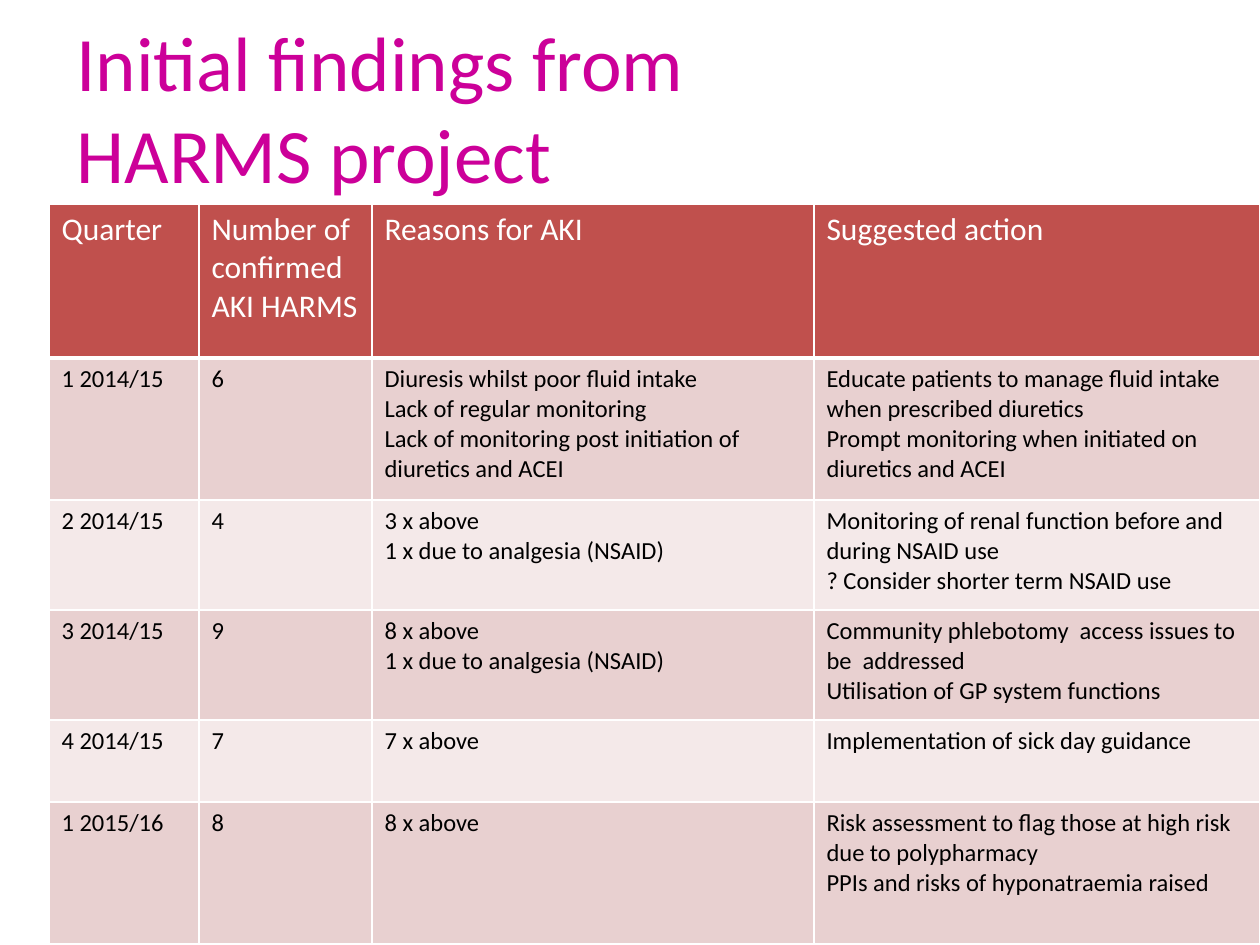
from lxml import etree
from pptx import Presentation
from pptx.dml.color import RGBColor
from pptx.enum.text import MSO_ANCHOR, MSO_AUTO_SIZE, PP_ALIGN
from pptx.oxml.ns import qn
from pptx.util import Pt

LEFT = PP_ALIGN.LEFT
MIDDLE = MSO_ANCHOR.MIDDLE
NO_AUTOFIT = MSO_AUTO_SIZE.NONE
PX = 914400 / 126
COLORS = {
    "title": "CC0099",
    "header": "C0504D",
    "odd_row": "E8D0D0",
    "even_row": "F4E9E9",
    "white": "FFFFFF",
    "black": "000000",
}
COLUMN_WIDTHS = [150, 173, 442, 446]
ROW_HEIGHTS = [154, 142, 110, 110, 82, 142]
FINDINGS = [
    ["Quarter", "Number of confirmed AKI HARMS", "Reasons for AKI", "Suggested action"],
    ["1 2014/15", "6",
     "Diuresis whilst poor fluid intake\nLack of regular monitoring\n"
     "Lack of monitoring post initiation of diuretics and ACEI",
     "Educate patients to manage fluid intake when prescribed diuretics\n"
     "Prompt monitoring when initiated on diuretics and ACEI"],
    ["2 2014/15", "4",
     "3 x above\n1 x due to analgesia (NSAID)",
     "Monitoring of renal function before and during NSAID use\n"
     "? Consider shorter term NSAID use"],
    ["3 2014/15", "9",
     "8 x above\n1 x due to analgesia (NSAID)",
     "Community phlebotomy  access issues to be  addressed\n"
     "Utilisation of GP system functions"],
    ["4 2014/15", "7", "7 x above", "Implementation of sick day guidance"],
    ["1 2015/16", "8", "8 x above",
     "Risk assessment to flag those at high risk due to polypharmacy\n"
     "PPIs and risks of hyponatraemia raised"],
]


def px(length):
    return round(length * PX)


def write_text(frame, text, *, size, color):
    frame.text = text
    for paragraph in frame.paragraphs:
        paragraph.alignment = LEFT
        font = paragraph.font
        font.name = "Calibri"
        font.size = Pt(size)
        font.bold = False
        font.color.rgb = RGBColor.from_string(COLORS[color])


prs = Presentation()
prs.slide_width, prs.slide_height = px(1260), px(945)
slide = prs.slides.add_slide(prs.slide_layouts[5])

title = slide.shapes.title
title.left, title.top, title.width, title.height = px(64), px(0), px(725), px(214)
title.text_frame.vertical_anchor = MIDDLE
title.text_frame.auto_size = NO_AUTOFIT
write_text(title.text_frame, "Initial findings from HARMS project", size=44, color="title")

table = slide.shapes.add_table(
    len(ROW_HEIGHTS), len(COLUMN_WIDTHS), px(49), px(204),
    px(sum(COLUMN_WIDTHS)), px(sum(ROW_HEIGHTS))).table
for column, width in zip(table.columns, COLUMN_WIDTHS):
    column.width = px(width)

for row_index, (row, height, texts) in enumerate(zip(table.rows, ROW_HEIGHTS, FINDINGS)):
    row.height = px(height)
    is_header = row_index == 0
    if is_header:
        fill_color, text_color, size = "header", "white", 18
    else:
        fill_color = "odd_row" if row_index % 2 else "even_row"
        text_color, size = "black", 14
    for cell, text in zip(row.cells, texts):
        write_text(cell.text_frame, text, size=size, color=text_color)
        properties = cell._tc.get_or_add_tcPr()
        for side in ("lnL", "lnR", "lnT", "lnB"):
            weight = 3 if is_header and side == "lnB" else 1
            border = etree.SubElement(properties, qn(f"a:{side}"), w=str(Pt(weight)))
            line_fill = etree.SubElement(border, qn("a:solidFill"))
            etree.SubElement(line_fill, qn("a:srgbClr"), val=COLORS["white"])
        cell.fill.solid()
        cell.fill.fore_color.rgb = RGBColor.from_string(COLORS[fill_color])

prs.save("out.pptx")
